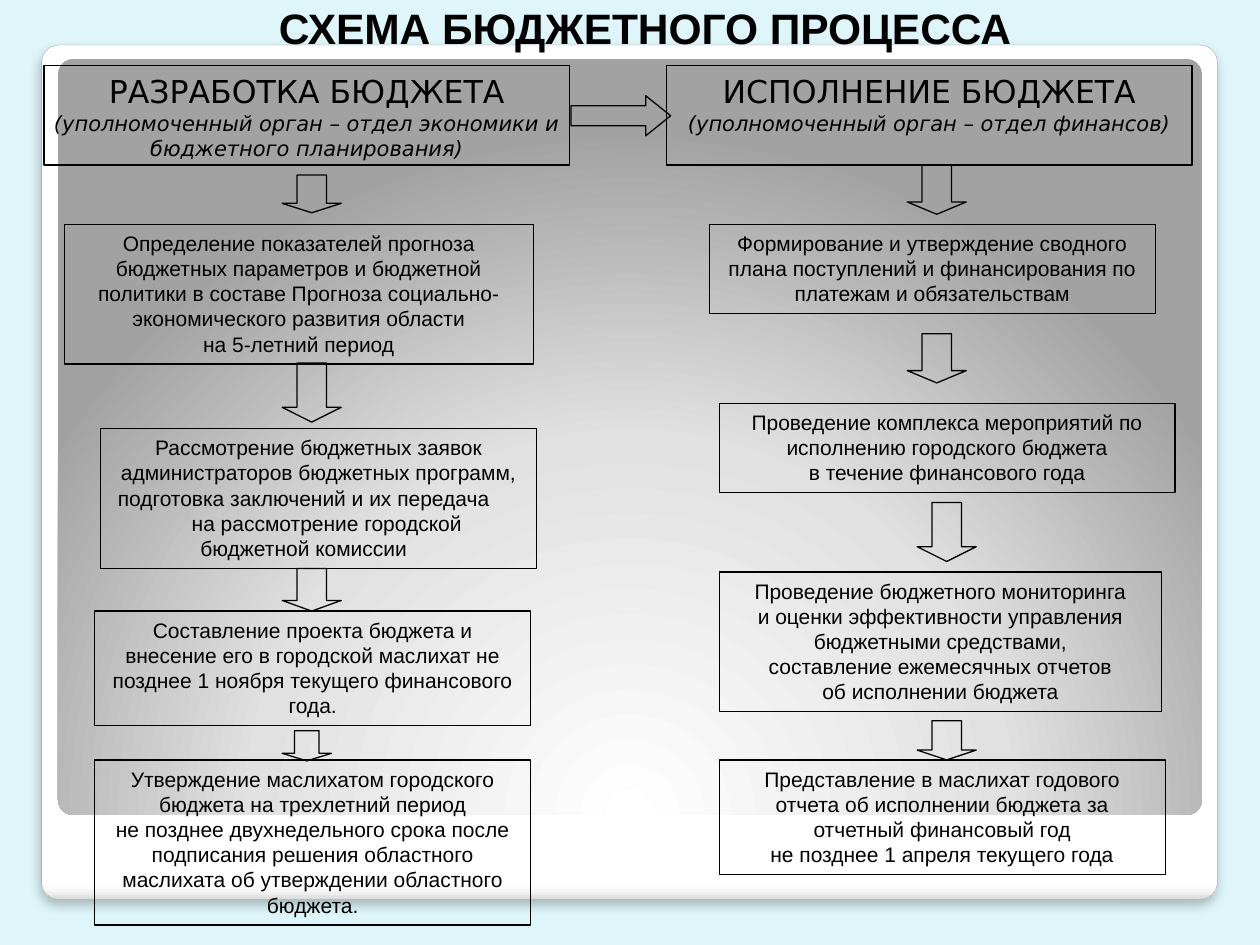
from dataclasses import dataclass

import lxml.etree
import pptx
import pptx.dml.color
import pptx.enum.shapes
import pptx.enum.text
import pptx.oxml
import pptx.oxml.ns
import pptx.util

Cm = pptx.util.Cm
Pt = pptx.util.Pt
SHAPE = pptx.enum.shapes.MSO_SHAPE
COLORS = {
    "background": "DEF5FA",
    "ink": "000000",
    "card_edge": "A4A4A4",
    "white": "FFFFFF",
    "card_fade": "F7F7F7",
    "card_end": "DADADA",
    "panel_middle": "E1E1E1",
    "panel_end": "A2A2A2",
}
DRAWING_NS = pptx.oxml.ns.nsdecls("a")


@dataclass
class Line:
    text: str
    size: float = 12
    font: str = "Arial"
    bold: bool = False
    italic: bool = False
    left: float = 0
    right: float = 0


@dataclass
class Box:
    x: float
    y: float
    width: float
    height: float
    lines: list[Line]


@dataclass
class Arrow:
    x: float
    y: float
    width: float
    height: float
    kind: SHAPE = SHAPE.DOWN_ARROW
    head: float = 0.25


def header(x: float, heading: str, *details: str) -> Box:
    lines = [Line(heading, 18, "DejaVu Sans")]
    lines += [Line(detail, 12, "DejaVu Sans", italic=True) for detail in details]
    return Box(x, 1.32, 10.59, 2.01, lines)


def step(x: float, y: float, width: float, height: float, *texts: str) -> Box:
    return Box(x, y, width, height, [Line(text) for text in texts])


HEADERS = [
    header(0.89, "РАЗРАБОТКА БЮДЖЕТА",
           "(уполномоченный орган – отдел экономики и", "бюджетного планирования)"),
    header(13.44, "ИСПОЛНЕНИЕ БЮДЖЕТА", "(уполномоченный орган – отдел финансов)"),
]
STEPS = [
    step(1.3, 4.52, 9.45, 2.82,
         "Определение показателей прогноза бюджетных параметров и бюджетной политики "
         "в составе Прогноза социально-экономического развития области",
         "на 5-летний период"),
    Box(2.03, 8.64, 8.79, 2.82, [
        Line("Рассмотрение бюджетных заявок администраторов бюджетных программ,"),
        Line("подготовка заключений и их передача", right=0.6),
        Line("на рассмотрение городской", left=0.93),
        Line("бюджетной комиссии"),
    ]),
    step(1.91, 12.32, 8.79, 2.31,
         "Составление проекта бюджета и внесение его в городской маслихат "
         "не позднее 1 ноября текущего финансового года."),
    step(1.91, 15.32, 8.79, 3.33,
         "Утверждение маслихатом городского бюджета на трехлетний период",
         "не позднее двухнедельного срока после подписания решения областного "
         "маслихата об утверждении областного бюджета."),
    step(14.3, 4.52, 8.99, 1.8,
         "Формирование и утверждение сводного плана поступлений и финансирования "
         "по платежам и обязательствам"),
    step(14.5, 8.13, 9.19, 1.8,
         "Проведение комплекса мероприятий по исполнению городского бюджета",
         "в течение финансового года"),
    step(14.5, 11.53, 8.92, 2.82,
         "Проведение бюджетного мониторинга",
         "и оценки эффективности управления бюджетными средствами,",
         "составление ежемесячных отчетов",
         "об исполнении бюджета"),
    step(14.5, 15.32, 8.99, 2.31,
         "Представление в маслихат годового отчета об исполнении бюджета "
         "за отчетный финансовый год",
         "не позднее 1 апреля текущего года"),
]
ARROWS = [
    Arrow(5.69, 3.53, 1.19, 0.76),
    Arrow(5.69, 7.32, 1.19, 1.19),
    Arrow(5.69, 11.46, 1.19, 0.86),
    Arrow(5.69, 14.73, 0.99, 0.61),
    Arrow(18.29, 3.33, 1.19, 0.99),
    Arrow(18.29, 6.73, 1.19, 0.99),
    Arrow(18.49, 10.13, 1.19, 1.19),
    Arrow(18.49, 14.53, 1.19, 0.79),
    Arrow(11.51, 1.93, 2.01, 0.81, SHAPE.RIGHT_ARROW, 0.62),
]


def color(name: str) -> pptx.dml.color.RGBColor:
    return pptx.dml.color.RGBColor.from_string(COLORS[name])


def add_outline(slide, kind: SHAPE, part: Box | Arrow):
    shape = slide.shapes.add_shape(
        kind, Cm(part.x), Cm(part.y), Cm(part.width), Cm(part.height))
    shape.shadow.inherit = False
    shape.fill.background()
    shape.line.color.rgb = color("ink")
    shape.line.width = Pt(0.75)
    return shape


def write_lines(frame, lines: list[Line]) -> None:
    frame.vertical_anchor = pptx.enum.text.MSO_ANCHOR.TOP
    for index, line in enumerate(lines):
        paragraph = frame.add_paragraph() if index else frame.paragraphs[0]
        paragraph.text = line.text
        paragraph.alignment = pptx.enum.text.PP_ALIGN.CENTER
        paragraph.font.size = Pt(line.size)
        paragraph.font.name = line.font
        paragraph.font.bold = line.bold
        paragraph.font.italic = line.italic
        paragraph.font.color.rgb = color("ink")
        properties = paragraph._p.get_or_add_pPr()
        for key, margin in (("marL", line.left), ("marR", line.right)):
            if margin:
                properties.set(key, str(int(Cm(margin))))


def add_backdrop(slide, x: float, y: float, width: float, height: float,
                 stops: list[tuple[int, str]], direction: str):
    backdrop = slide.shapes.add_shape(
        SHAPE.ROUNDED_RECTANGLE, Cm(x), Cm(y), Cm(width), Cm(height))
    backdrop.adjustments[0] = 0.02
    backdrop.shadow.inherit = False
    backdrop.line.fill.background()
    marks = "".join(
        f'<a:gs pos="{position * 1000}"><a:srgbClr val="{COLORS[name]}"/></a:gs>'
        for position, name in stops)
    gradient = pptx.oxml.parse_xml(
        f'<a:gradFill {DRAWING_NS} rotWithShape="1"><a:gsLst>{marks}</a:gsLst>'
        f'{direction}</a:gradFill>')
    backdrop._element.spPr.find(pptx.oxml.ns.qn("a:prstGeom")).addnext(gradient)
    return backdrop


def add_card(slide) -> None:
    card = add_backdrop(
        slide, 0.84, 0.91, 23.7, 17.22,
        [(0, "white"), (98, "white"), (99, "card_fade"), (100, "card_end")],
        '<a:lin ang="5400000" scaled="0"/>')
    card.line.color.rgb = color("card_edge")
    card.line.width = Pt(0.16)
    effects = card._element.spPr.find(pptx.oxml.ns.qn("a:effectLst"))
    effects.append(pptx.oxml.parse_xml(
        f'<a:outerShdw {DRAWING_NS} blurRad="{Pt(6)}" dist="{Pt(4)}" dir="5400000">'
        f'<a:srgbClr val="{COLORS["ink"]}"><a:alpha val="25000"/></a:srgbClr>'
        '</a:outerShdw>'))


def main() -> None:
    deck = pptx.Presentation()
    deck.slide_width, deck.slide_height = Cm(25.4), Cm(19.05)
    slide = deck.slides.add_slide(deck.slide_layouts[6])
    slide.background.fill.solid()
    slide.background.fill.fore_color.rgb = color("background")

    add_card(slide)
    add_backdrop(
        slide, 1.17, 1.19, 23.06, 15.24,
        [(0, "white"), (55, "panel_middle"), (100, "panel_end")],
        '<a:path path="circle"><a:fillToRect l="50000" t="175000" r="50000" b="-75000"/>'
        '</a:path>')

    title = slide.shapes.add_textbox(Cm(1.5), Cm(0.05), Cm(23.01), Cm(1.02)).text_frame
    title.word_wrap = True
    title.margin_top = title.margin_bottom = 0
    write_lines(title, [Line("СХЕМА БЮДЖЕТНОГО ПРОЦЕССА", 24.3, bold=True)])

    for stage in HEADERS:
        frame = add_outline(slide, SHAPE.RECTANGLE, stage).text_frame
        frame.word_wrap = False
        frame.margin_left = frame.margin_right = frame.margin_bottom = 0
        frame.margin_top = Cm(0.14)
        write_lines(frame, stage.lines)
    for task in STEPS:
        frame = add_outline(slide, SHAPE.RECTANGLE, task).text_frame
        frame.word_wrap = True
        write_lines(frame, task.lines)
    for arrow in ARROWS:
        add_outline(slide, arrow.kind, arrow).adjustments[1] = arrow.head

    deck.save("out.pptx")


if __name__ == "__main__":
    main()
